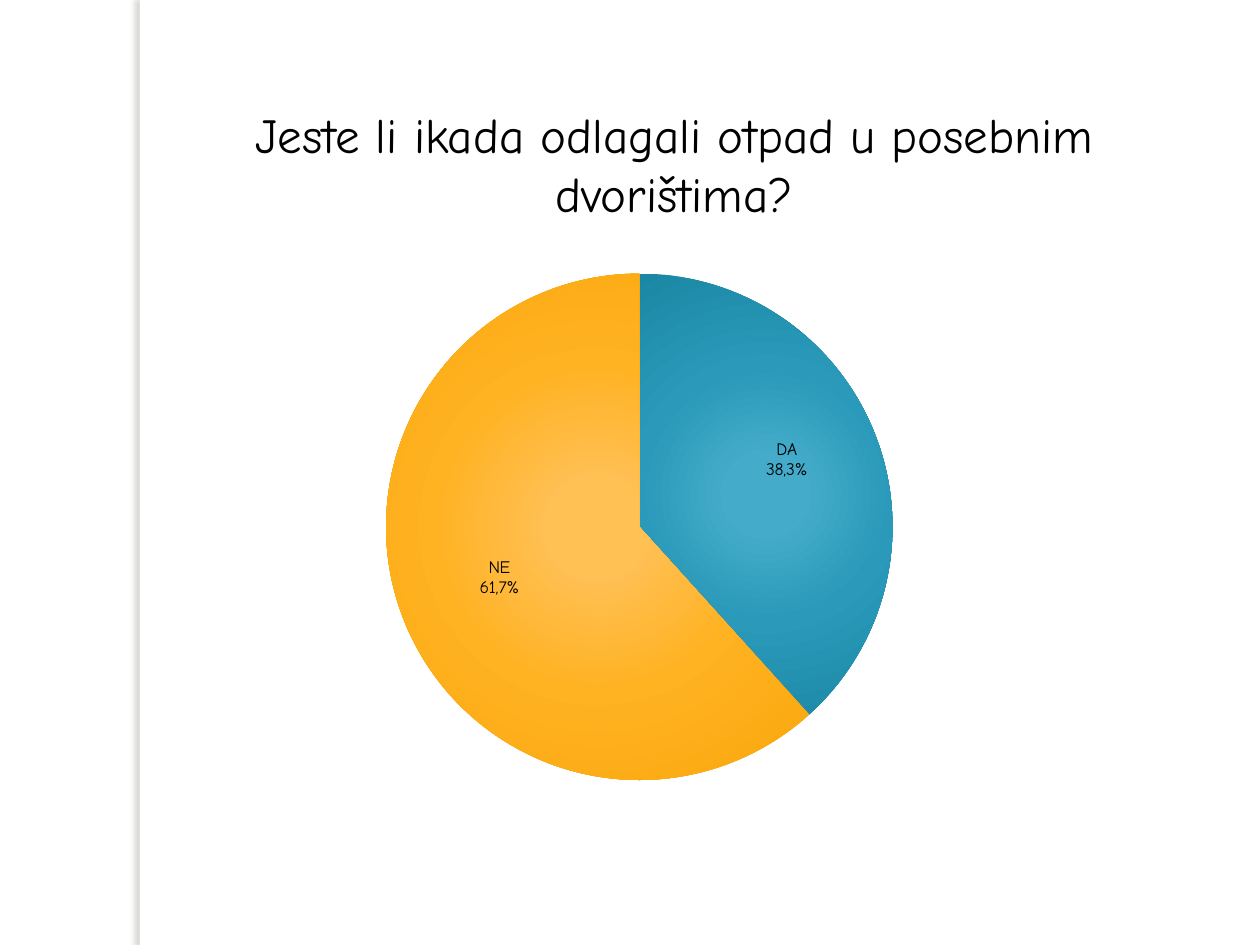
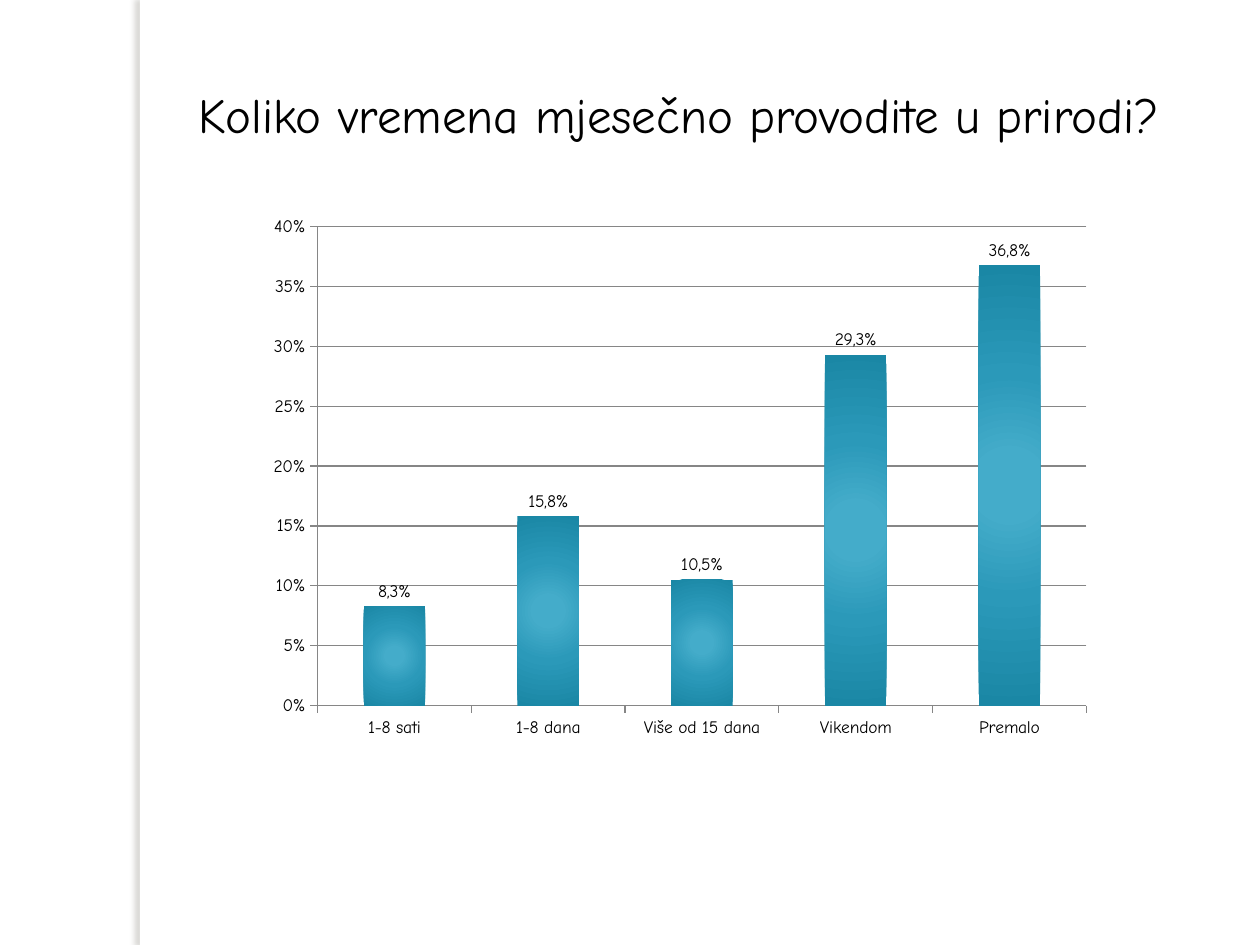
from lxml import etree
from pptx import Presentation
from pptx.chart.data import CategoryChartData
from pptx.dml.color import RGBColor
from pptx.enum.chart import XL_CHART_TYPE, XL_LABEL_POSITION, XL_TICK_MARK
from pptx.enum.shapes import MSO_SHAPE
from pptx.enum.text import MSO_AUTO_SIZE, PP_ALIGN
from pptx.oxml import parse_xml
from pptx.util import Inches, Pt

PIE = XL_CHART_TYPE.PIE
COLUMN = XL_CHART_TYPE.COLUMN_CLUSTERED
CENTER_LABEL = XL_LABEL_POSITION.CENTER
OUTSIDE_LABEL = XL_LABEL_POSITION.OUTSIDE_END
OUTSIDE_TICK = XL_TICK_MARK.OUTSIDE
RECTANGLE = MSO_SHAPE.RECTANGLE
GROW = MSO_AUTO_SIZE.SHAPE_TO_FIT_TEXT
CENTER = PP_ALIGN.CENTER

FONT = "Comic Neue"
COLORS = {"paper": "FFFFFF", "text": "000000", "shadow": "736F63", "axis": "868686"}
GRADIENTS = {
    "teal": ("44ACCA", "2B99B9", "1A87A5"),
    "orange": ("FFC054", "FFB222", "F9A70B"),
}
DRAWING = 'xmlns:a="http://schemas.openxmlformats.org/drawingml/2006/main"'
CHART = 'xmlns:c="http://schemas.openxmlformats.org/drawingml/2006/chart"'


def write_text(text_frame, text, size=10, align=CENTER):
    for index, line in enumerate(text.split("\n")):
        paragraph = text_frame.paragraphs[0] if index == 0 else text_frame.add_paragraph()
        paragraph.alignment = align
        run = paragraph.add_run()
        run.text = line
        run.font.name = FONT
        run.font.size = Pt(size)
        run.font.color.rgb = RGBColor.from_string(COLORS["text"])


def manual_layout(settings):
    layout = parse_xml(f"<c:layout {CHART}><c:manualLayout/></c:layout>")
    for name, value in settings:
        etree.SubElement(layout[0], layout.tag.replace("layout", name)).set("val", str(round(value, 3)))if not isinstance(value, str) else etree.SubElement(layout[0], layout.tag.replace("layout", name)).set("val", value)
    return layout


slides = [
    {
        "title": "Jeste li ikada odlagali otpad u posebnim dvorištima?",
        "title_box": (1.09, 0.78, 8.52, 1.04),
        "kind": PIE,
        "chart_box": (2.19, 2.03, 5.78, 4.3),
        "plot_box": (3.06, 2.17, 4.02, 4.02),
        "categories": ["1", "2"],
        "values": [0.383, 0.617],
        "labels": ["DA\n38,3%", "NE\n61,7%"],
        "label_position": CENTER_LABEL,
        "label_offsets": [(0.04, -0.04), (-0.03, 0.01)],
        "gradients": ["teal", "orange"],
    },
    {
        "title": "Koliko vremena mjesečno provodite u prirodi?",
        "title_box": (1.09, 0.62, 8.59, 0.57),
        "kind": COLUMN,
        "chart_box": (2.03, 1.64, 6.72, 4.3),
        "plot_box": (2.52, 1.8, 6.1, 3.8),
        "categories": ["1-8 sati", "1-8 dana", "Više od 15 dana", "Vikendom", "Premalo"],
        "values": [0.083, 0.158, 0.105, 0.293, 0.368],
        "labels": ["8,3%", "15,8%", "10,5%", "29,3%", "36,8%"],
        "label_position": OUTSIDE_LABEL,
        "label_offsets": [],
        "gradients": ["teal"],
    },
]

presentation = Presentation()
presentation.slide_width = Inches(10)
presentation.slide_height = Inches(7.5)

for content in slides:
    slide = presentation.slides.add_slide(presentation.slide_layouts[6])
    slide.background.fill.solid()
    slide.background.fill.fore_color.rgb = RGBColor.from_string(COLORS["paper"])

    band = slide.shapes.add_shape(RECTANGLE, Inches(1.11), 0, Inches(0.08), Inches(7.5))
    band.fill.solid()
    band.fill.fore_color.rgb = RGBColor.from_string(COLORS["paper"])
    band.line.fill.background()
    band.shadow.inherit = False
    effects = band._element.spPr.find("{*}effectLst")
    effects.append(parse_xml(
        f'<a:outerShdw {DRAWING} blurRad="38100" dist="38100" dir="10800000" algn="tl" rotWithShape="0">'
        f'<a:srgbClr val="{COLORS["shadow"]}"><a:alpha val="25000"/></a:srgbClr></a:outerShdw>'
    ))

    data = CategoryChartData(number_format="0.00%")
    data.categories = content["categories"]
    data.add_series("Series 1", content["values"])
    left, top, width, height = content["chart_box"]
    chart = slide.shapes.add_chart(
        content["kind"], Inches(left), Inches(top), Inches(width), Inches(height), data
    ).chart
    chart.has_legend = False
    chart.has_title = False
    chart.font.name = "Calibri"
    chart.font.size = Pt(10)
    chart.font.color.rgb = RGBColor.from_string(COLORS["text"])

    plot_left, plot_top, plot_width, plot_height = content["plot_box"]
    plot_area = chart._chartSpace.chart.plotArea
    for old_layout in plot_area.findall("{*}layout"):
        plot_area.remove(old_layout)
    plot_area.insert(0, manual_layout([
        ("layoutTarget", "inner"),
        ("xMode", "edge"),
        ("yMode", "edge"),
        ("x", (plot_left - left) / width),
        ("y", (plot_top - top) / height),
        ("w", plot_width / width),
        ("h", plot_height / height),
    ]))

    plot = chart.plots[0]
    plot.vary_by_categories = content["kind"] == PIE
    series = plot.series[0]
    painted = series.points if content["kind"] == PIE else [series]
    for part, gradient in zip(painted, content["gradients"]):
        part.format.fill.solid()
        part.format.line.fill.background()
        stops = "".join(
            f'<a:gs pos="{position}"><a:srgbClr val="{color}"/></a:gs>'
            for position, color in zip((15000, 50000, 100000), GRADIENTS[gradient])
        )
        properties = part.format._element.find("{*}spPr")
        properties.replace(properties.find("{*}solidFill"), parse_xml(
            f'<a:gradFill {DRAWING} rotWithShape="1"><a:gsLst>{stops}</a:gsLst><a:path path="circle">'
            '<a:fillToRect l="50000" t="50000" r="50000" b="50000"/></a:path></a:gradFill>'
        ))

    labels = series.data_labels
    labels.show_value = True
    labels.number_format = "0.00%"
    labels.number_format_is_linked = False
    labels.position = content["label_position"]
    labels.font.name = FONT
    labels.font.size = Pt(10)
    for index, text in enumerate(content["labels"]):
        label = series.points[index].data_label
        write_text(label.text_frame, text)
        label.position = content["label_position"]
    for element, offset in zip(labels._element.findall("{*}dLbl"), content["label_offsets"]):
        for old_layout in element.findall("{*}layout"):
            element.remove(old_layout)
        element.insert(1, manual_layout(zip("xy", offset)))

    if content["kind"] == COLUMN:
        plot.gap_width = 150
        value_axis = chart.value_axis
        value_axis.minimum_scale = 0
        value_axis.maximum_scale = 0.4
        value_axis.major_unit = 0.05
        value_axis.has_major_gridlines = True
        value_axis.tick_labels.number_format = "0%"
        value_axis.tick_labels.number_format_is_linked = False
        for axis in (value_axis, chart.category_axis):
            axis.major_tick_mark = OUTSIDE_TICK
            axis.tick_labels.font.name = FONT
            axis.tick_labels.font.size = Pt(10)
        for part in (value_axis, chart.category_axis, value_axis.major_gridlines):
            part.format.line.color.rgb = RGBColor.from_string(COLORS["axis"])
            part.format.line.width = Pt(0.75)

    title = slide.shapes.add_textbox(*[Inches(length) for length in content["title_box"]])
    title.text_frame.word_wrap = True
    title.text_frame.auto_size = GROW
    write_text(title.text_frame, content["title"], size=28)

presentation.save("out.pptx")
